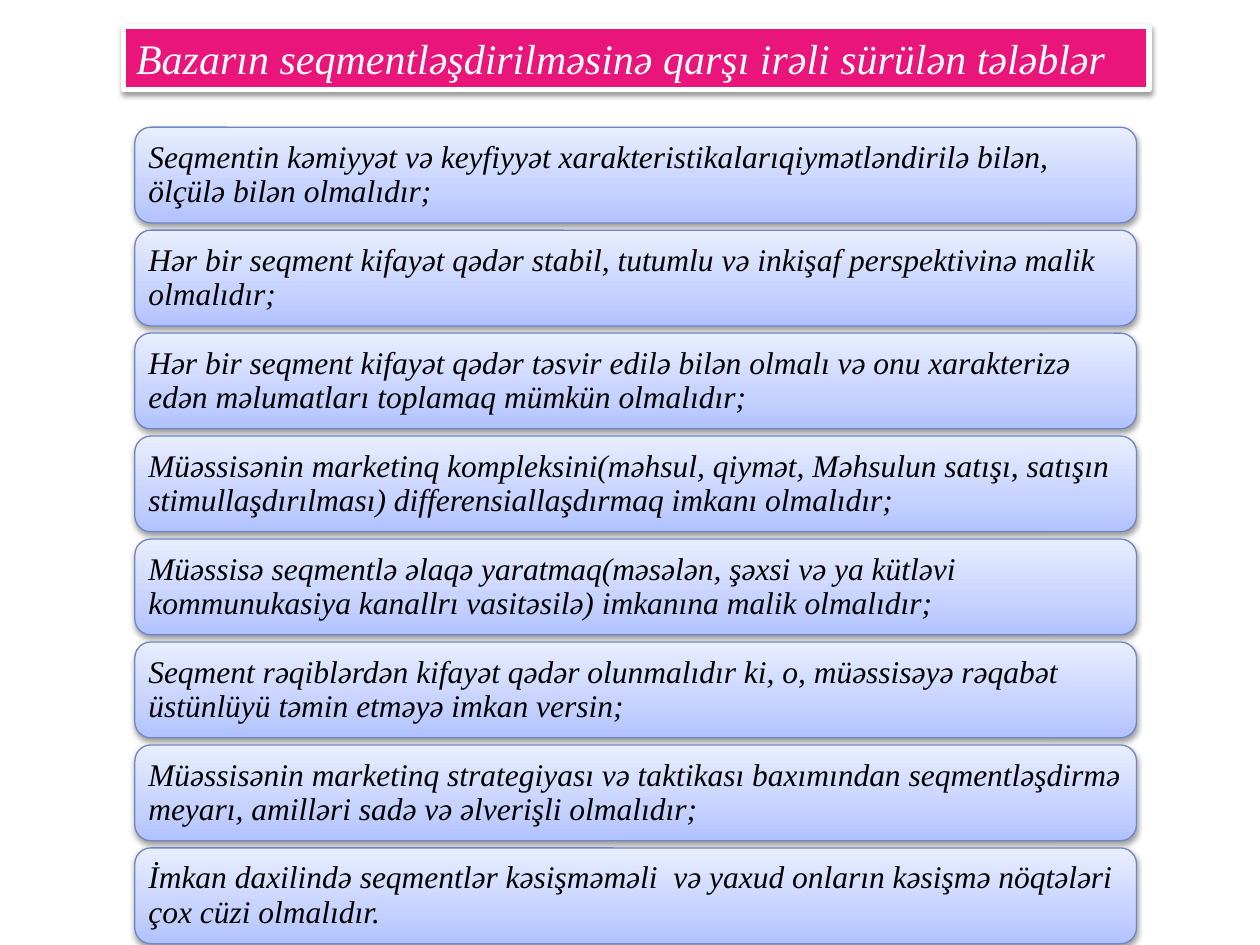
import copy
from dataclasses import dataclass

import pptx
import pptx.dml.color
import pptx.enum.shapes
import pptx.enum.text
import pptx.oxml
import pptx.oxml.ns
import pptx.util
from pptx.util import Inches

COLORS = {
    "heading": "EA157A",
    "white": "FFFFFF",
    "black": "000000",
    "card_border": "6E86C6",
}
CARD_GRADIENT = ((0, "B0C1FF"), (0.35, "C6D2FF"), (1, "E9EEFF"))
FONT = "Times New Roman"


@dataclass
class Requirement:
    text: str
    top: float


CARD_LEFT, CARD_WIDTH, CARD_HEIGHT = 1.07, 7.95, 0.76
FIRST_TOP, LAST_TOP = 1.01, 6.73
REQUIREMENT_TEXTS = [
    "Seqmentin kəmiyyət və keyfiyyət xarakteristikalarıqiymətləndirilə bilən, ölçülə bilən olmalıdır;",
    "Hər bir seqment kifayət qədər stabil, tutumlu və inkişaf perspektivinə malik olmalıdır;",
    "Hər bir seqment kifayət qədər təsvir edilə bilən olmalı və onu xarakterizə edən məlumatları toplamaq mümkün olmalıdır;",
    "Müəssisənin marketinq kompleksini(məhsul, qiymət, Məhsulun satışı, satışın stimullaşdırılması) differensiallaşdırmaq imkanı olmalıdır;",
    "Müəssisə seqmentlə əlaqə yaratmaq(məsələn, şəxsi və ya kütləvi kommunukasiya kanallrı vasitəsilə) imkanına malik olmalıdır;",
    "Seqment rəqiblərdən kifayət qədər olunmalıdır ki, o, müəssisəyə rəqabət üstünlüyü təmin etməyə imkan versin;",
    "Müəssisənin marketinq strategiyası və taktikası baxımından seqmentləşdirmə meyarı, amilləri sadə və əlverişli olmalıdır;",
    "İmkan daxilində seqmentlər kəsişməməli  və yaxud onların kəsişmə nöqtələri çox cüzi olmalıdır.",
]


def rgb(name: str) -> pptx.dml.color.RGBColor:
    return pptx.dml.color.RGBColor.from_string(COLORS.get(name, name))


def apply_format(target, values: dict) -> None:
    for attribute, value in values.items():
        setattr(target, attribute, value)


def write_text(shape, text: str, size: int, color: str, inset: tuple[float, float]) -> None:
    frame = shape.text_frame
    side, edge = (Inches(length) for length in inset)
    apply_format(frame, {
        "text": text,
        "word_wrap": True,
        "auto_size": pptx.enum.text.MSO_AUTO_SIZE.NONE,
        "vertical_anchor": pptx.enum.text.MSO_ANCHOR.MIDDLE,
        "margin_left": side, "margin_right": side,
        "margin_top": edge, "margin_bottom": edge,
    })
    paragraph = frame.paragraphs[0]
    paragraph.alignment = pptx.enum.text.PP_ALIGN.LEFT
    font = paragraph.runs[0].font
    apply_format(font, {"name": FONT, "size": pptx.util.Pt(size), "italic": True, "bold": False})
    font.color.rgb = rgb(color)


def outline(shape, color: str, width: float) -> None:
    shape.line.color.rgb = rgb(color)
    shape.line.width = pptx.util.Pt(width)


def drop_shadow(shape) -> None:
    shape.shadow.inherit = False
    effects = shape.element.spPr.find(pptx.oxml.ns.qn("a:effectLst"))
    effects.append(pptx.oxml.parse_xml(
        f'<a:outerShdw {pptx.oxml.ns.nsdecls("a")} blurRad="40000" dist="20000" '
        f'dir="5400000" rotWithShape="0"><a:srgbClr val="{COLORS["black"]}">'
        '<a:alpha val="38000"/></a:srgbClr></a:outerShdw>'))


def fill_gradient(shape) -> None:
    shape.fill.gradient()
    shape.fill.gradient_angle = 90
    stops = shape.element.spPr.find(".//" + pptx.oxml.ns.qn("a:gsLst"))
    stops.append(copy.deepcopy(stops[0]))  # the default gradient has two stops
    for stop, (position, color) in zip(shape.fill.gradient_stops, CARD_GRADIENT):
        stop.position = position
        stop.color.rgb = rgb(color)


def draw_heading(slide) -> None:
    heading = slide.shapes.title
    apply_format(heading, {
        "left": Inches(0.98), "top": Inches(0.21),
        "width": Inches(8.14), "height": Inches(0.5),
    })
    heading.fill.solid()
    heading.fill.fore_color.rgb = rgb("heading")
    outline(heading, "white", 3)
    drop_shadow(heading)
    write_text(heading, "Bazarın seqmentləşdirilməsinə qarşı irəli sürülən tələblər",
               24, "white", (0.1, 0.05))


def draw_requirement(slide, requirement: Requirement) -> None:
    card = slide.shapes.add_shape(
        pptx.enum.shapes.MSO_SHAPE.ROUNDED_RECTANGLE, Inches(CARD_LEFT),
        Inches(requirement.top), Inches(CARD_WIDTH), Inches(CARD_HEIGHT))
    fill_gradient(card)
    outline(card, "card_border", 0.75)
    drop_shadow(card)
    write_text(card, requirement.text, 18, "black", (0.07, 0.07))
    card.text_frame.paragraphs[0].line_spacing = 0.9


def main() -> None:
    presentation = pptx.Presentation()
    apply_format(presentation, {"slide_width": Inches(10), "slide_height": Inches(7.5)})
    slide = presentation.slides.add_slide(presentation.slide_layouts.get_by_name("Title Only"))

    # Heading banner
    draw_heading(slide)

    # Evenly spaced requirement cards
    pitch = (LAST_TOP - FIRST_TOP) / (len(REQUIREMENT_TEXTS) - 1)
    for row, text in enumerate(REQUIREMENT_TEXTS):
        draw_requirement(slide, Requirement(text, FIRST_TOP + row * pitch))

    presentation.save("out.pptx")


if __name__ == "__main__":
    main()
